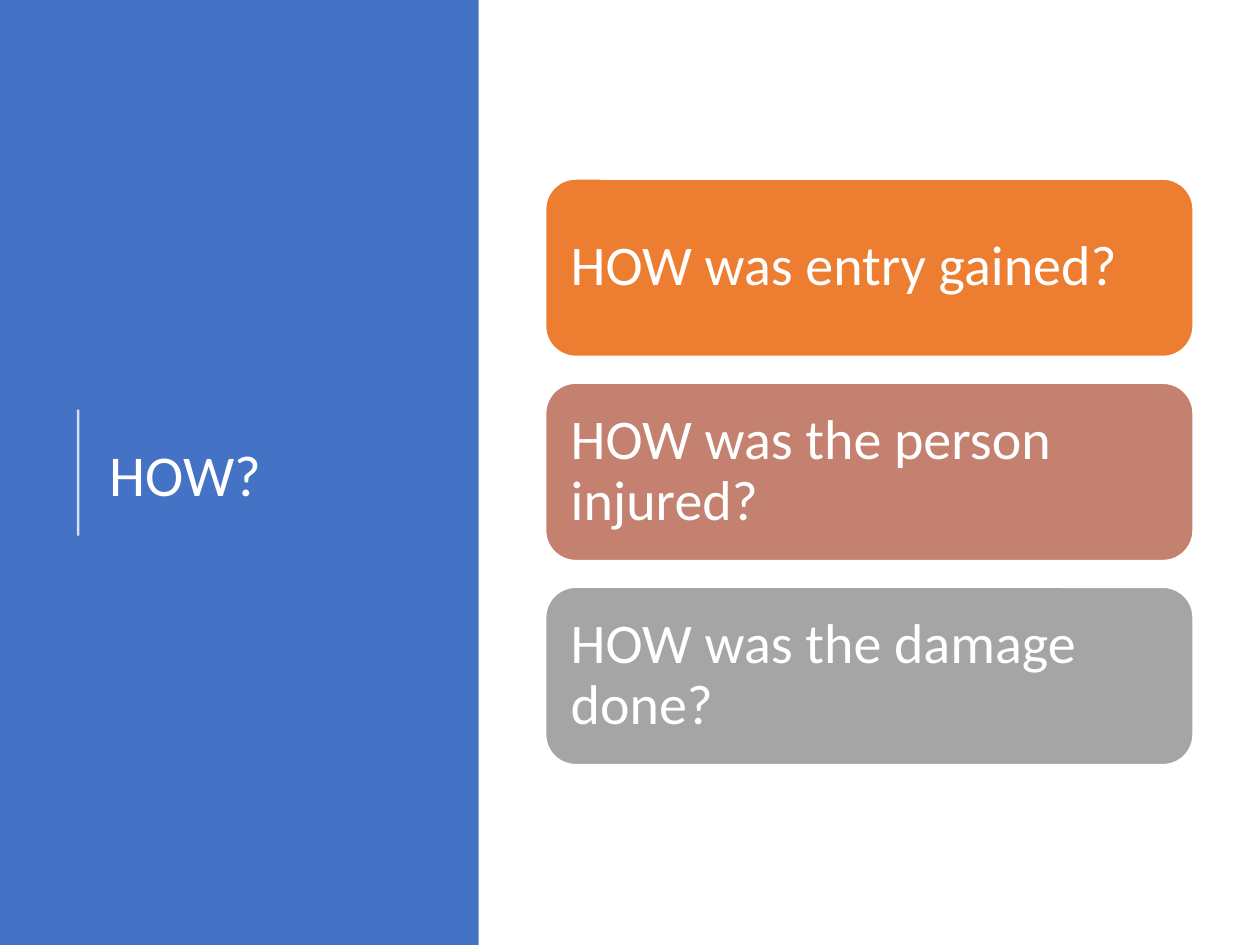
from lxml import etree
from pptx import Presentation
from pptx.dml.color import RGBColor
from pptx.enum.shapes import MSO_CONNECTOR, MSO_SHAPE
from pptx.enum.text import MSO_ANCHOR, MSO_AUTO_SIZE, PP_ALIGN
from pptx.oxml.ns import qn
from pptx.util import Inches, Pt

RECT, ROUND = MSO_SHAPE.RECTANGLE, MSO_SHAPE.ROUNDED_RECTANGLE
STRAIGHT = MSO_CONNECTOR.STRAIGHT
MIDDLE, LEFT, NO_FIT = MSO_ANCHOR.MIDDLE, PP_ALIGN.LEFT, MSO_AUTO_SIZE.NONE

TITLE = "HOW?"
CARDS = [
    ("HOW was entry gained?", "ED7D31"),
    ("HOW was the person injured?", "C48170"),
    ("HOW was the damage done?", "A5A5A5"),
]
THEME = {"font": "Calibri", "panel": "4472C4", "light": "FFFFFF",
         "title": 33, "card": 32}

CARD_X, CARD_Y, CARD_W, CARD_H = 4.33, 1.42, 5.14, 1.41
STEP = 1.62


def rgb(key):
    return RGBColor.from_string(THEME.get(key, key))


def write(shape, text, size, inset=(0.1, 0.05)):
    frame = shape.text_frame
    frame.text = text
    frame.word_wrap = True
    frame.auto_size = NO_FIT
    frame.vertical_anchor = MIDDLE
    frame.margin_left = frame.margin_right = Inches(inset[0])
    frame.margin_top = frame.margin_bottom = Inches(inset[1])
    para = frame.paragraphs[0]
    para.alignment = LEFT
    para.line_spacing = 0.9
    font = para.runs[0].font
    font.name, font.size = THEME["font"], Pt(THEME[size])
    font.color.rgb = rgb("light")


def block(slide, kind, box, fill, line=None):
    shape = slide.shapes.add_shape(kind, *map(Inches, box))
    shape.shadow.inherit = False
    shape.fill.solid()
    shape.fill.fore_color.rgb = rgb(fill)
    if line:
        shape.line.color.rgb = rgb(line)
        shape.line.width = Pt(1)
    else:
        shape.line.fill.background()
    return shape


def rule(slide, x, top, end):
    """Draw the translucent vertical line beside the title."""
    line = slide.shapes.add_connector(
        STRAIGHT, Inches(x), Inches(top), Inches(x), Inches(end))
    line.line.color.rgb = rgb("light")
    line.line.width = Pt(1.5)
    props = line._element.spPr
    color = props.find(".//" + qn("a:srgbClr"))
    etree.SubElement(color, qn("a:alpha"), val="80000")
    etree.SubElement(props, qn("a:effectLst"))


def main():
    deck = Presentation()
    deck.slide_width, deck.slide_height = Inches(10), Inches(7.5)
    slide = deck.slides.add_slide(deck.slide_layouts[5])

    panel = block(slide, RECT, (0, 0, 3.8, 7.5), "panel")
    title = slide.shapes.title
    title.left, title.top = Inches(0.77), Inches(0.78)
    title.width, title.height = Inches(2.76), Inches(6.02)
    title._element.addprevious(panel._element)
    write(title, TITLE, "title")
    rule(slide, 0.62, 3.25, 4.25)

    for i, (text, fill) in enumerate(CARDS):
        box = (CARD_X, CARD_Y + i * STEP, CARD_W, CARD_H)
        card = block(slide, ROUND, box, fill, line="light")
        card.adjustments[0] = 0.17
        write(card, text, "card", inset=(0.13, 0.13))

    deck.save("out.pptx")


if __name__ == "__main__":
    main()
